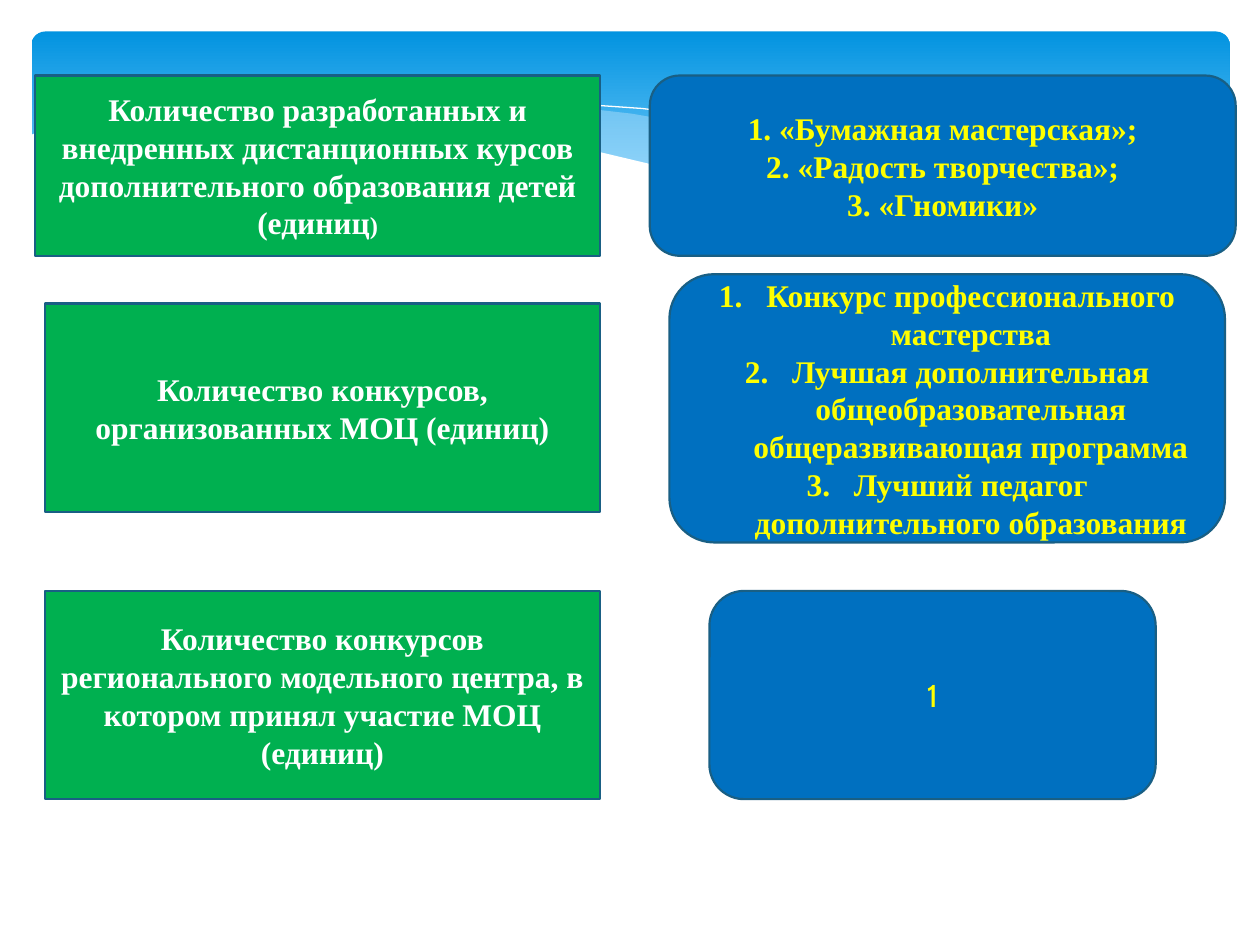
from lxml import etree
from pptx import Presentation
from pptx import util as u
from pptx.dml.color import RGBColor
from pptx.enum import shapes, text
from pptx.oxml import ns

Pt = u.Pt
WHITE = RGBColor(0xFF, 0xFF, 0xFF)
YELLOW = RGBColor(0xFF, 0xFF, 0x00)
GREEN = RGBColor(0x00, 0xB0, 0x50)
BLUE = RGBColor(0x00, 0x70, 0xC0)
OUTLINE = RGBColor(0x19, 0x5F, 0x84)
SKY_TOP = RGBColor(0x02, 0x93, 0xE0)
SKY_BOTTOM = RGBColor(0x83, 0xD3, 0xFE)
PALE_BLUE = RGBColor(0xC6, 0xE7, 0xFC)

PALE_WAVE = [
    (643, 120.2), (623.5, 118.1), (581, 110.9), (533.5, 102.2), (481, 90.7),
    (452.9, 83.5), (420.5, 76.3), (389.5, 69.8), (361.4, 64.8), (334.8, 61.9),
    (302.4, 59), (273.6, 57.6), (247.7, 57.6), (225.4, 59), (205.9, 61.9),
    (232.6, 64.8), (260.6, 69.8), (290.9, 76.3), (323.3, 83.5), (381.6, 97.2),
    (420.5, 105.1), (456.5, 112.3), (489.6, 117.4), (519.8, 121),
    (547.9, 123.1), (581, 124.6), (610.6, 123.8), (630.7, 121.7)]
CREST = [
    (222.5, 64.8), (236.2, 61.9), (261.4, 59.8), (299.5, 58.3), (337.7, 59.8),
    (367.2, 61.9), (400.3, 65.5), (437.8, 70.6), (478.8, 77.8), (523.4, 86.4),
    (572.4, 97.9), (625.7, 111.6), (653, 119.5)]
WHITE_WAVE = [
    (703.4, 101.5), (684, 108.7), (662.4, 114.5), (638.6, 119.5), (612, 122.4),
    (582.5, 123.1), (547.9, 122.4), (509.8, 118.8), (466.6, 112.3),
    (416.9, 103.7), (380.9, 95.8), (321.8, 82.1), (281.5, 73.4),
    (244.8, 66.2), (210.2, 61.2), (180, 58.3), (151.9, 56.2), (127.4, 56.2),
    (95, 58.3), (68.4, 61.2), (48.2, 65.5), (33.1, 70.6), (18, 77),
    (16.6, 77), (16.6, 161.3), (703.4, 161.3)]


class SlideBuilder:
    """Holds the style and the current slide; all lengths are in points."""

    font = "Times New Roman"
    size = 18
    outline_width = 1.25
    number_indent = 27

    def __init__(self, slide):
        self.slide = slide

    def add_preset(self, kind, left, top, width, height):
        shape = self.slide.shapes.add_shape(
            kind, Pt(left), Pt(top), Pt(width), Pt(height))
        shape.shadow.inherit = False
        return shape

    def banner(self, left, top, width, height):
        panel = self.add_preset(
            shapes.MSO_SHAPE.ROUNDED_RECTANGLE, left, top, width, height)
        panel.adjustments[0] = 0.07
        panel.line.fill.background()
        panel.fill.gradient()
        panel.fill.gradient_angle = 270
        stops = panel.fill.gradient_stops
        for stop, position, color in zip(stops, (0, 0.9), (SKY_TOP, SKY_BOTTOM)):
            stop.position = position
            stop.color.rgb = color

    def wave(self, points, fill=None, opacity=100, line=None):
        builder = self.slide.shapes.build_freeform(*points[0], scale=Pt(1))
        builder.add_line_segments(points[1:], close=fill is not None)
        wave = builder.convert_to_shape()
        wave.shadow.inherit = False
        if fill is None:
            wave.fill.background()
        else:
            wave.fill.solid()
            wave.fill.fore_color.rgb = fill
            if opacity < 100:
                color = wave.fill._xPr.find(".//" + ns.qn("a:srgbClr"))
                etree.SubElement(color, ns.qn("a:alpha"), val=str(opacity * 1000))
        if line is None:
            wave.line.fill.background()
        else:
            wave.line.color.rgb = line
            wave.line.width = Pt(0)

    def card(self, kind, box, fill, color, lines, font=None, bold=True,
             numbered=False):
        card = self.add_preset(kind, *box)
        card.fill.solid()
        card.fill.fore_color.rgb = fill
        card.line.color.rgb = OUTLINE
        card.line.width = Pt(self.outline_width)
        frame = card.text_frame
        frame.word_wrap = True
        frame.vertical_anchor = text.MSO_ANCHOR.MIDDLE
        for index, line in enumerate(lines):
            paragraph = frame.paragraphs[0] if index == 0 else frame.add_paragraph()
            paragraph.alignment = text.PP_ALIGN.CENTER
            if numbered:
                self.number(paragraph)
            paragraph.add_run().text = line
            paragraph.font.name = font or self.font
            paragraph.font.size = Pt(self.size)
            paragraph.font.bold = bold
            paragraph.font.color.rgb = color
        return card

    def number(self, paragraph):
        props = paragraph._p.get_or_add_pPr()
        props.set("marL", str(Pt(self.number_indent)))
        props.set("indent", str(-Pt(self.number_indent)))
        etree.SubElement(props, ns.qn("a:buFont"), typeface="+mj-lt")
        etree.SubElement(props, ns.qn("a:buAutoNum"), type="arabicPeriod")

    def measure(self, box, caption):
        return self.card(shapes.MSO_SHAPE.RECTANGLE, box, GREEN, WHITE, [caption])

    def result(self, box, lines, **style):
        return self.card(shapes.MSO_SHAPE.ROUNDED_RECTANGLE, box, BLUE, YELLOW,
                         lines, **style)


def main():
    deck = Presentation()
    deck.slide_width, deck.slide_height = Pt(720), Pt(540)
    page = SlideBuilder(deck.slides.add_slide(deck.slide_layouts[6]))

    # Banner with waves
    page.banner(18, 18, 684.7, 112.3)
    page.wave(PALE_WAVE, fill=PALE_BLUE, opacity=40)
    page.wave(CREST, line=WHITE)
    page.wave(WHITE_WAVE, fill=WHITE)

    # Measures on the left
    courses = page.measure(
        (20, 43.2, 323, 103),
        "Количество разработанных и внедренных дистанционных курсов "
        "дополнительного образования детей (единиц")
    bracket = courses.text_frame.paragraphs[0].add_run()
    bracket.text = ")"
    bracket.font.size = Pt(14)
    page.measure((25.5, 173.5, 317.5, 119),
                 "Количество конкурсов, организованных МОЦ (единиц)")
    page.measure((25.5, 337.7, 317.5, 119),
                 "Количество конкурсов регионального модельного центра, "
                 "в котором принял участие МОЦ (единиц)")

    # Results on the right
    page.result((371.3, 43.2, 334.8, 103),
                ["1. «Бумажная мастерская»;",
                 "2. «Радость творчества»;",
                 "3. «Гномики»"])
    page.result((382.5, 156.7, 317.5, 153.3),
                ["Конкурс профессионального мастерства",
                 "Лучшая дополнительная общеобразовательная "
                 "общеразвивающая программа",
                 "Лучший педагог дополнительного образования"],
                numbered=True)
    page.result((405.4, 337.7, 255, 119), ["1"], font="Cabin", bold=False)

    deck.save("out.pptx")


if __name__ == "__main__":
    main()
